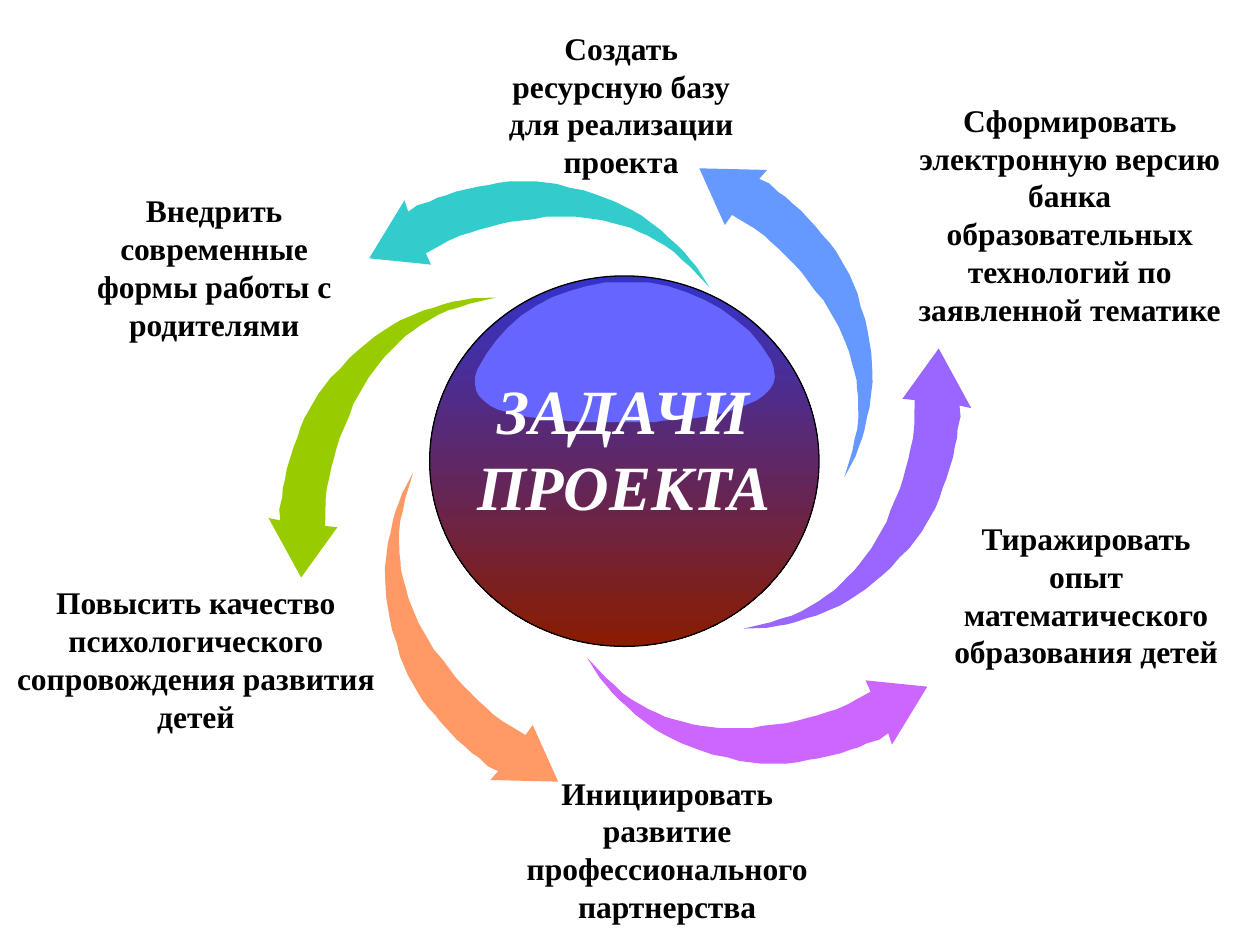
from typing import NamedTuple

from pptx import Presentation
from pptx.dml.color import RGBColor
from pptx.enum.shapes import MSO_SHAPE as SHAPE
from pptx.enum.text import MSO_ANCHOR as ANCHOR, MSO_AUTO_SIZE as AUTO_SIZE, PP_ALIGN as ALIGN
from pptx.util import Inches, Pt

FONT = "Times New Roman"

# Outlines in hundredths of an inch from their own top left corner.
ARROW_OUTLINE = [
    (225, 27), (221, 18), (270, 23), (242, 69), (239, 60), (232, 65), (222, 68),
    (216, 71), (209, 73), (201, 76), (192, 78), (183, 80), (176, 81), (167, 83),
    (159, 84), (152, 84), (144, 84), (137, 84), (129, 83), (121, 82), (111, 79),
    (100, 77), (91, 74), (83, 71), (75, 68), (69, 65), (61, 61), (54, 57),
    (46, 51), (38, 45), (33, 40), (25, 33), (20, 28), (16, 23), (10, 16), (0, 0),
    (15, 16), (22, 22), (28, 28), (35, 33), (42, 37), (49, 41), (56, 44),
    (62, 47), (69, 49), (77, 51), (84, 53), (90, 54), (98, 55), (106, 56),
    (113, 56), (121, 56), (130, 56), (140, 54), (149, 53), (158, 52), (167, 50),
    (174, 48), (182, 46), (191, 43), (198, 41), (207, 37), (214, 33),
]
GLOSS_OUTLINE = [
    (235, 62), (237, 68), (238, 75), (237, 80), (234, 85), (229, 90), (223, 94),
    (216, 97), (207, 101), (197, 104), (186, 106), (174, 108), (161, 109),
    (148, 110), (143, 111), (86, 111), (73, 110), (62, 109), (52, 108), (42, 107),
    (33, 105), (25, 103), (18, 101), (12, 98), (7, 94), (3, 90), (1, 86), (0, 81),
    (0, 75), (2, 69), (9, 57), (17, 46), (26, 36), (36, 27), (48, 19), (61, 12),
    (75, 7), (89, 3), (104, 0), (120, 0), (137, 0), (153, 3), (168, 8), (182, 14),
    (195, 21), (207, 30), (218, 39), (227, 50),
]


class Arrow(NamedTuple):
    left: float
    top: float
    rotation: int
    color: str


class Label(NamedTuple):
    left: float
    top: float
    width: float
    height: float
    text: str


ARROWS = [
    Arrow(5.04, 1.99, 240, "6699FF"),
    Arrow(2.93, 1.44, 180, "33CCCC"),
    Arrow(1.55, 2.90, 120, "99CC00"),
    Arrow(2.24, 4.71, 60, "FF9966"),
    Arrow(4.66, 5.22, 0, "CC66FF"),
    Arrow(5.59, 3.61, 300, "9966FF"),
]
LABELS = [
    Label(3.77, 0.18, 2.32, 1.62, "Создать ресурсную базу для реализации проекта"),
    Label(0.66, 1.47, 2.08, 1.62, "Внедрить современные формы работы с родителями"),
    Label(-0.13, 4.58, 3.37, 1.62,
          "Повысить качество психологического\nсопровождения развития детей"),
    Label(4.07, 6.09, 2.45, 1.31, "Инициировать развитие профессионального партнерства"),
    Label(7.12, 0.75, 2.74, 1.92, "Сформировать электронную версию банка "
          "образовательных технологий по заявленной тематике"),
    Label(7.46, 4.07, 2.32, 1.31, "Тиражировать опыт математического образования детей"),
]


def rgb(color: str) -> RGBColor:
    return RGBColor.from_string(color)


def add_outline(s, points: list, left: float, top: float, color: str):
    builder = s.shapes.build_freeform(*points[0], scale=Inches(0.01))
    builder.add_line_segments(points[1:], close=True)
    sp = builder.convert_to_shape(Inches(left), Inches(top))
    sp.shadow.inherit = False
    sp.fill.solid()
    sp.fill.fore_color.rgb = rgb(color)
    sp.line.fill.background()
    return sp


def write_text(sp, text: str, size: int, color: str, italic: bool = False) -> None:
    tf = sp.text_frame
    tf.text = text
    tf.word_wrap = True
    tf.auto_size = AUTO_SIZE.NONE
    tf.vertical_anchor = ANCHOR.TOP
    for p in tf.paragraphs:
        p.alignment = ALIGN.CENTER
        p.font.name = FONT
        p.font.size = Pt(size)
        p.font.bold = True
        p.font.italic = italic
        p.font.color.rgb = rgb(color)


def add_sphere(s) -> None:
    sp = s.shapes.add_shape(SHAPE.OVAL, Inches(3.41), Inches(2.19), Inches(3.09), Inches(2.94))
    sp.shadow.inherit = False
    sp.fill.gradient()
    sp.fill.gradient_angle = 270
    for stop, position, color in zip(sp.fill.gradient_stops, (0, 1), ("3333CC", "8A1C00")):
        stop.position = position
        stop.color.rgb = rgb(color)
    sp.line.color.rgb = rgb("000000")
    sp.line.width = Pt(0.75)
    add_outline(s, GLOSS_OUTLINE, 3.77, 2.24, "6666FF")


def place_title(s) -> None:
    """Put the title on the sphere, in front of it."""
    title = s.shapes.title
    title.left, title.top = Inches(2.89), Inches(2.9)
    title.width, title.height = Inches(4.12), Inches(1.31)
    write_text(title, "ЗАДАЧИ ПРОЕКТА", 36, "FFFFFF", italic=True)
    title.element.getparent().append(title.element)


def add_arrow(s, arrow: Arrow) -> None:
    sp = add_outline(s, ARROW_OUTLINE, arrow.left, arrow.top, arrow.color)
    sp.rotation = arrow.rotation


def add_label(s, label: Label) -> None:
    box = s.shapes.add_textbox(Inches(label.left), Inches(label.top),
                               Inches(label.width), Inches(label.height))
    write_text(box, label.text, 18, "000000")


def main() -> None:
    prs = Presentation()
    prs.slide_width, prs.slide_height = Inches(10), Inches(7.5)
    s = prs.slides.add_slide(prs.slide_layouts[5])
    add_sphere(s)
    place_title(s)
    for arrow in ARROWS:
        add_arrow(s, arrow)
    for label in LABELS:
        add_label(s, label)
    prs.save("out.pptx")


if __name__ == "__main__":
    main()
